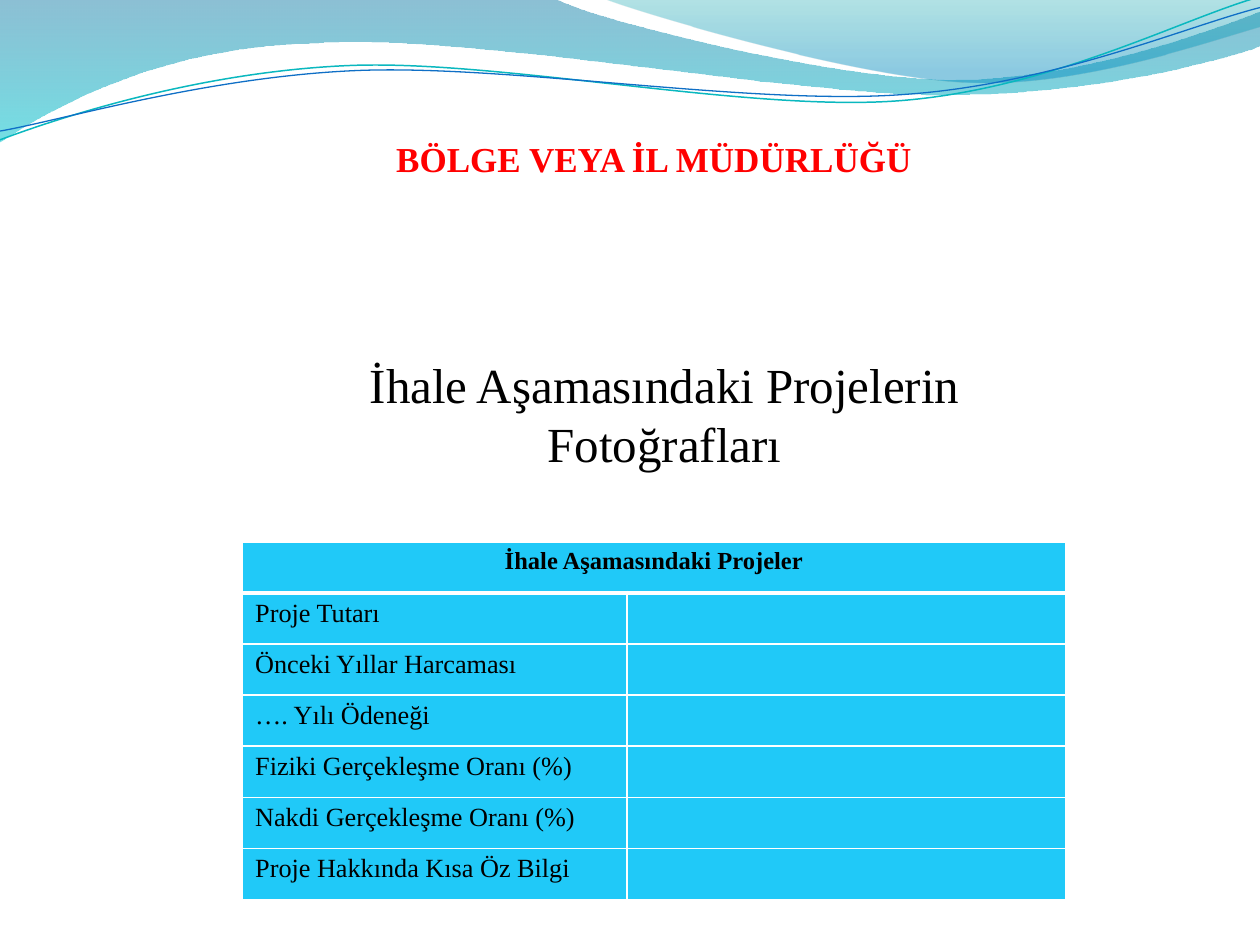
from dataclasses import dataclass
from math import cos, radians, sin
from typing import Optional

from lxml.etree import SubElement
from pptx import Presentation
from pptx.dml.color import RGBColor
from pptx.enum.text import MSO_ANCHOR, PP_ALIGN
from pptx.oxml.ns import qn
from pptx.util import Inches, Pt

COLUMNS, ROWS = 100, 75
SLIDE_WIDTH, SLIDE_HEIGHT = Inches(10), Inches(7.5)
FONT = "Times New Roman"

RED = RGBColor(0xFF, 0x00, 0x00)
BLACK = RGBColor(0x00, 0x00, 0x00)
WHITE = RGBColor(0xFF, 0xFF, 0xFF)
CELL_BLUE = RGBColor(0x20, 0xC9, 0xF8)
DEEP_BLUE = RGBColor(0x00, 0x74, 0xA1)
AQUA = RGBColor(0x00, 0xC6, 0xCF)
TEAL = RGBColor(0x00, 0xA1, 0xA9)
SEA_BLUE = RGBColor(0x00, 0x8B, 0xBF)
LINE_TEAL = RGBColor(0x0A, 0xB8, 0xBF)
LINE_BLUE = RGBColor(0x0F, 0x6F, 0xC6)

TABLE_HEADING = "İhale Aşamasındaki Projeler"
TABLE_LABELS = (
    "Proje Tutarı",
    "Önceki Yıllar Harcaması",
    "…. Yılı Ödeneği",
    "Fiziki Gerçekleşme Oranı (%)",
    "Nakdi Gerçekleşme Oranı (%)",
    "Proje Hakkında Kısa Öz Bilgi",
)


@dataclass(frozen=True)
class Stop:
    position: float
    color: RGBColor
    opacity: int


@dataclass(frozen=True)
class Wave:
    start: tuple
    segments: tuple
    stops: tuple = ()
    line_color: Optional[RGBColor] = None
    line_width: float = 0
    tilt: float = 0
    pivot: tuple = (0, 0)


WAVES = (
    Wave(
        (0, 0),
        (
            (44, -0.1),
            (47.6, 1.7, 66.4, 6.3, 75.8, 6.3),
            (85.3, 6.3, 95.8, 2.6, 100, 0.9),
            (100.1, 3.6),
            (98.3, 4.4, 87, 7.6, 74.6, 7.5),
            (62.2, 7.5, 38.2, 2.8, 25.7, 3.4),
            (12.9, 3.6, 4.6, 8.3, -0.1, 11.3),
            (0, 0),
        ),
        stops=(Stop(0, DEEP_BLUE, 45), Stop(1, AQUA, 55)),
    ),
    Wave(
        (47.9, -0.1),
        (
            (50.9, 1.1, 68.2, 6.2, 76.9, 6.5),
            (85.6, 6.9, 96.1, 3.2, 100, 2.1),
            (100, 0),
            (47.9, -0.1),
        ),
        stops=(Stop(0, TEAL, 30), Stop(0.8, SEA_BLUE, 45)),
    ),
    Wave(
        (0, 11.1),
        (
            (4.8, 9.3, 15.8, 5.7, 27.7, 5.2),
            (39.5, 4.7, 59.3, 8.9, 71.3, 8),
            (83.3, 7.1, 93.8, 1.5, 99.8, -0.2),
        ),
        line_color=LINE_TEAL,
        line_width=0.85,
        tilt=-2.7,
        pivot=(49.9, 5.75),
    ),
    Wave(
        (0, 10.4),
        (
            (4.7, 9.6, 16.4, 6.1, 28.3, 5.6),
            (40.3, 5.1, 59.7, 8.4, 71.7, 7.5),
            (83.6, 6.7, 94.1, 2.1, 100, 0.6),
        ),
        line_color=LINE_BLUE,
        line_width=0.75,
        tilt=-2.7,
        pivot=(49.95, 5.9),
    ),
)


def column(count: float) -> int:
    return round(SLIDE_WIDTH * count / COLUMNS)


def row(count: float) -> int:
    return round(SLIDE_HEIGHT * count / ROWS)


def level_point(wave: Wave, point: tuple) -> tuple:
    angle = radians(-wave.tilt)
    across, down = point[0] - wave.pivot[0], point[1] - wave.pivot[1]
    return (
        column(wave.pivot[0] + across * cos(angle) - down * sin(angle)),
        row(wave.pivot[1] + across * sin(angle) + down * cos(angle)),
    )


def bend_segments(shape, segments: tuple) -> None:
    vertices = iter(list(shape._element.iter(qn("a:lnTo"))))
    for segment in segments:
        corners = [next(vertices) for _ in range(len(segment) // 2)]
        if len(corners) == 1:
            continue
        outline = corners[0].getparent()
        curve = SubElement(outline, qn("a:cubicBezTo"))
        corners[0].addprevious(curve)
        for corner in corners:
            curve.append(corner[0])
            outline.remove(corner)


def draw_wave(slide, wave: Wave) -> None:
    points = [wave.start]
    for segment in wave.segments:
        points += zip(segment[::2], segment[1::2])
    points = [level_point(wave, point) for point in points]
    builder = slide.shapes.build_freeform(*points[0])
    builder.add_line_segments(points[1:], close=bool(wave.stops))
    shape = builder.convert_to_shape()
    bend_segments(shape, wave.segments)
    shape.rotation = wave.tilt
    shape.shadow.inherit = False
    if not wave.stops:
        shape.fill.background()
        shape.line.color.rgb = wave.line_color
        shape.line.width = Pt(wave.line_width)
        return
    shape.line.fill.background()
    shape.fill.gradient()
    shape.fill.gradient_angle = 270
    for gradient_stop, stop in zip(shape.fill.gradient_stops, wave.stops):
        gradient_stop.position = stop.position
        gradient_stop.color.rgb = stop.color
    for color, stop in zip(shape._element.iter(qn("a:srgbClr")), wave.stops):
        SubElement(color, qn("a:alpha"), val=str(stop.opacity * 1000))


def write_text(text_frame, text: str, size: float, color: RGBColor,
               bold: bool = False, alignment=PP_ALIGN.CENTER) -> None:
    text_frame.text = text
    paragraph = text_frame.paragraphs[0]
    paragraph.alignment = alignment
    for run in paragraph.runs:
        run.font.name = FONT
        run.font.size = Pt(size)
        run.font.bold = bold
        run.font.color.rgb = color


def format_cell(cell, top: float, bottom: float) -> None:
    properties = cell._tc.get_or_add_tcPr()
    for side, width in (("L", 1), ("R", 1), ("T", top), ("B", bottom)):
        border = SubElement(properties, qn(f"a:ln{side}"), w=str(Pt(width)))
        fill = SubElement(border, qn("a:solidFill"))
        SubElement(fill, qn("a:srgbClr"), val=str(WHITE))
    cell.fill.solid()
    cell.fill.fore_color.rgb = CELL_BLUE
    cell.margin_bottom = 0


def draw_title(slide) -> None:
    title = slide.shapes.title
    title.left, title.top, title.width, title.height = column(19.25), row(9.15), column(65.3), row(6.3)
    text_frame = title.text_frame
    text_frame.vertical_anchor = MSO_ANCHOR.MIDDLE
    text_frame.margin_left = text_frame.margin_right = text_frame.margin_bottom = 0
    text_frame.margin_top = Inches(0.05)
    write_text(text_frame, "BÖLGE VEYA İL MÜDÜRLÜĞÜ", 20, RED, bold=True)


def draw_caption(slide) -> None:
    caption = slide.shapes.add_textbox(column(20.1), row(21.8), column(65.3), row(26.5))
    caption.text_frame.word_wrap = True
    caption.text_frame.vertical_anchor = MSO_ANCHOR.MIDDLE
    caption.text_frame.margin_bottom = row(5)
    write_text(caption.text_frame, "İhale Aşamasındaki Projelerin Fotoğrafları", 28, BLACK)


def draw_table(slide) -> None:
    row_count = len(TABLE_LABELS) + 1
    table = slide.shapes.add_table(
        row_count, 2, column(19.25), row(43), column(65.3), row(28.4)
    ).table
    for table_column, width in zip(table.columns, (30.5, 34.8)):
        table_column.width = column(width)
    for index in range(row_count):
        for cell in table.rows[index].cells:
            format_cell(cell, top=3 if index == 1 else 1, bottom=3 if index == 0 else 1)
    heading = table.cell(0, 0)
    heading.merge(table.cell(0, 1))
    write_text(heading.text_frame, TABLE_HEADING, 14, BLACK, bold=True)
    for index, label in enumerate(TABLE_LABELS, start=1):
        write_text(table.cell(index, 0).text_frame, label, 15, BLACK, alignment=PP_ALIGN.LEFT)


def main() -> None:
    presentation = Presentation()
    presentation.slide_width, presentation.slide_height = SLIDE_WIDTH, SLIDE_HEIGHT
    slide = presentation.slides.add_slide(presentation.slide_layouts[5])
    for wave in WAVES:
        draw_wave(slide, wave)
    draw_title(slide)
    draw_table(slide)
    draw_caption(slide)
    presentation.save("out.pptx")


if __name__ == "__main__":
    main()
